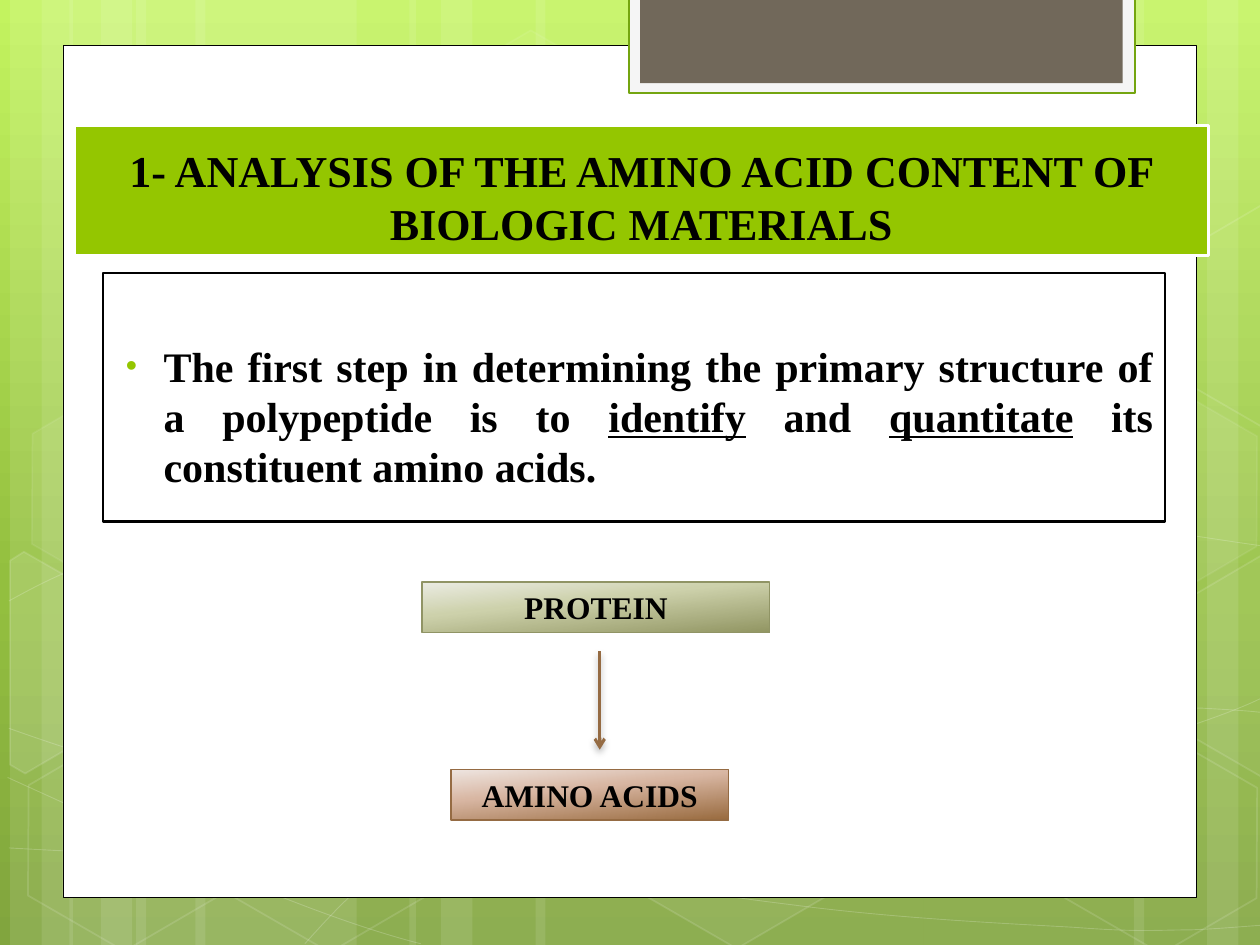
from copy import deepcopy
from lxml.etree import SubElement
from pptx import Presentation
from pptx.dml.color import RGBColor
from pptx.enum.shapes import MSO_CONNECTOR as CONN, MSO_SHAPE as SHAPE
from pptx.enum.text import MSO_ANCHOR as ANCHOR, PP_ALIGN as ALIGN
from pptx.oxml.ns import qn
from pptx.util import Inches, Pt

THEME = dict(
    font="Times New Roman", title=25.2, body=24, label=18,
    text="000000", white="FFFFFF", accent="94C600", tab="71685A",
    tab_edge="F5F5F5", tab_line="74A510", brown="956B43", olive="909465",
    backdrop=[(0, "C3F35F"), (62, "93BF3F"), (100, "81A53E")],
    olive_fade=[(0, "EBECE3"), (40, "CDD1AB"), (100, "929663")],
    brown_fade=[(0, "EEE5E0"), (40, "D8B6A2"), (100, "996B3F")],
)

TITLE = [("1- ANALYSIS OF THE AMINO ACID CONTENT OF BIOLOGIC MATERIALS", False)]
BODY = [
    ("The first step in determining the primary structure of a polypeptide is to ", False),
    ("identify", True), (" and ", False), ("quantitate", True),
    (" its constituent amino acids.", False),
]
LABELS = [
    ("PROTEIN", (3.35, 4.62, 2.76, 0.4), "olive_fade", "olive"),
    ("AMINO ACIDS", (3.58, 6.11, 2.2, 0.4), "brown_fade", "brown"),
]
STRIPES = [
    (1.08, 1.75), (0.08, 0.5), (0.33, 0.83), (1.55, 1.75), (0.55, 0.5), (0.8, 0.83),
    (7.33, 1.75), (9.58, 0.5), (9, 0.83), (4.25, 3.08), (3.25, 0.5), (3.5, 0.83),
]
CURVES = [
    [(0.07, 6.73), (0.61, 6.76), (1.15, 6.79), (1.9, 6.78), (2.65, 6.77), (3.58, 6.75),
     (4.58, 6.65), (5.58, 6.55), (7, 6.36), (7.92, 6.17), (8.83, 5.98), (9.77, 5.68),
     (10.07, 5.51)],
    [(0.07, 4.77), (0.36, 4.61), (0.65, 4.46), (1.21, 4.31), (1.78, 4.16), (2.59, 3.94),
     (3.47, 3.87), (4.36, 3.8), (5.44, 3.79), (6.54, 3.87), (7.64, 3.95), (9.47, 4.26),
     (10.07, 4.34)],
    [(0.06, 6.17), (1.27, 6.72), (2.47, 7.27), (3.34, 7.49)],
    [(0.07, 5.78), (0.38, 5.89), (0.7, 6), (1.28, 6.16), (1.86, 6.31), (2.73, 6.56),
     (3.57, 6.73), (4.4, 6.9), (5.45, 7.08), (6.28, 7.18), (7.11, 7.29), (8, 7.33),
     (8.53, 7.36), (9.05, 7.4), (9.19, 7.38), (9.45, 7.38), (9.71, 7.37), (9.89, 7.35),
     (10.07, 7.34)],
    [(2.42, 7.49), (2.6, 7.29), (2.78, 7.09), (3.02, 6.91), (3.26, 6.73), (3.6, 6.53),
     (3.88, 6.39), (4.16, 6.25), (4.33, 6.19), (4.7, 6.09), (5.06, 5.99), (5.73, 5.85),
     (6.08, 5.78), (6.44, 5.71), (6.49, 5.71), (6.8, 5.69), (7.11, 5.66), (7.6, 5.63),
     (7.94, 5.62), (8.29, 5.61), (8.86, 5.62), (8.86, 5.62), (8.86, 5.62), (9.53, 5.62),
     (9.53, 5.62), (9.71, 5.63), (9.88, 5.64), (9.97, 5.65), (10.06, 5.66),
     (10.03, 5.65), (10.06, 5.66)],
]
HEXAGONS = [
    (3.34, 0.36, 4, 8), (4.97, 5.89, 6, 12), (0.11, 5.91, None, 12), (0.14, 3.12, 7, 8),
    (1.74, 5.92, None, 12), (8.34, 5.93, None, 12), (8.34, 3.14, 7, 8),
]
CUT_HEXAGONS = [
    ([(0.08, 4.45), (0.19, 4.38), (0.96, 4.82), (0.95, 5.7), (0.2, 6.14), (0.08, 6.07)], 10),
    ([(9.26, 4.85), (10.01, 4.41), (10.09, 4.46), (10.09, 6.13), (10.02, 6.17),
      (9.26, 5.73)], 4),
    ([(9.26, 2.07), (10.01, 1.63), (10.1, 1.68), (10.09, 3.35), (10.02, 3.39),
      (9.26, 2.95)], None),
]


def paint(fmt, color, alpha=100):
    fmt.solid()
    fmt.fore_color.rgb = RGBColor.from_string(color)
    if alpha < 100:
        clr = fmt._xPr.find(qn("a:solidFill"))[0]
        SubElement(clr, qn("a:alpha"), val=str(alpha * 1000))


def fade(fill, element, stops, angle):
    fill.gradient()
    fill.gradient_angle = 360 - angle
    gs_list = element.find(".//" + qn("a:gsLst"))
    gs_list.insert(1, deepcopy(gs_list[0]))
    for stop, (position, color) in zip(fill.gradient_stops, stops):
        stop.position = position / 100
        stop.color.rgb = RGBColor.from_string(color)


def style(sp, fill=None, alpha=100, line=None, width=1, line_alpha=100):
    sp.shadow.inherit = False
    if fill:
        paint(sp.fill, fill, alpha)
    else:
        sp.fill.background()
    if line:
        sp.line.width = Pt(width)
        paint(sp.line.fill, line, line_alpha)
    else:
        sp.line.fill.background()
    return sp


def add_box(s, box, shape=SHAPE.RECTANGLE, **look):
    return style(s.shapes.add_shape(shape, *map(Inches, box)), **look)


def add_outline(s, points, close, **look):
    points = [(Inches(x), Inches(y)) for x, y in points]
    builder = s.shapes.build_freeform(*points[0], scale=1.0)
    builder.add_line_segments(points[1:], close=close)
    return style(builder.convert_to_shape(), **look)


def add_curve(s, points, **look):
    sp = add_outline(s, points, False, **look)
    outline = sp._element.find(".//" + qn("a:path".replace("path", "pathLst")))[0]
    steps = outline.findall(qn("a:lnTo"))
    for i in range(0, len(steps), 3):
        bend = SubElement(outline, qn("a:cubicBezTo"))
        for step in steps[i:i + 3]:
            bend.append(step[0])
            outline.remove(step)


def add_text(sp, runs, size, align=ALIGN.CENTER, anchor=ANCHOR.MIDDLE, top=0.05, bullet=None):
    tf = sp.text_frame
    tf.word_wrap, tf.vertical_anchor, tf.margin_top = True, anchor, Inches(top)
    p = tf.paragraphs[0]
    p.alignment = align
    if bullet:
        pPr = p._p.get_or_add_pPr()
        pPr.set("marL", str(Inches(0.38)))
        pPr.set("indent", str(Inches(-0.3)))
        SubElement(SubElement(pPr, qn("a:buClr")), qn("a:srgbClr"), val=THEME["accent"])
        SubElement(pPr, qn("a:buSzPct"), val="76000")
        SubElement(pPr, qn("a:buFont"), typeface="Arial")
        SubElement(pPr, qn("a:buChar"), char=bullet)
    for text, underline in runs:
        r = p.add_run()
        r.text = text
        r.font.name, r.font.size = THEME["font"], Pt(size)
        r.font.bold, r.font.underline = True, underline
        r.font.color.rgb = RGBColor.from_string(THEME["text"])


def add_arrow(s, start, end):
    cx = s.shapes.add_connector(CONN.STRAIGHT, *map(Inches, start + end))
    cx.line.width = Pt(1.75)
    paint(cx.line.fill, THEME["brown"])
    SubElement(cx.line._get_or_add_ln(), qn("a:tailEnd"), type="arrow")
    effects = SubElement(cx._element.spPr, qn("a:effectLst"))
    shadow = SubElement(effects, qn("a:outerShdw"), blurRad=str(Pt(4)), dist=str(Pt(2)),
                        dir="5400000", rotWithShape="0")
    clr = SubElement(shadow, qn("a:srgbClr"), val=THEME["text"])
    SubElement(clr, qn("a:alpha"), val="28000")


def add_backdrop(s):
    white = THEME["white"]
    fade(s.background.fill, s._element, THEME["backdrop"], 90)
    for left, width in STRIPES:
        add_box(s, (left, 0, width, 7.5), fill=white, alpha=10)
    for points in CURVES:
        add_curve(s, points, line=white, width=0.5, line_alpha=20)
    for left, top, alpha, line_alpha in HEXAGONS:
        sp = add_box(s, (left, top, 1.75, 1.52), SHAPE.HEXAGON, fill=alpha and white,
                     alpha=alpha or 100, line=white, line_alpha=line_alpha)
        sp.adjustments[0], sp.adjustments[1] = 0.285, 1.155
        sp.rotation = 30
    for points, alpha in CUT_HEXAGONS:
        add_outline(s, points, True, fill=alpha and white, alpha=alpha or 100,
                    line=white, line_alpha=12)
    add_box(s, (0.5, 0.36, 9, 6.76), fill=white, line=THEME["text"], width=0.5)
    add_box(s, (4.99, -0.02, 4.02, 0.76), fill=THEME["tab_edge"],
            line=THEME["tab_line"], width=1.25)
    add_box(s, (5.08, -0.02, 3.83, 0.68), fill=THEME["tab"])


def main():
    """Build the slide on analysing the amino acid content of biologic materials."""
    prs = Presentation()
    prs.slide_width, prs.slide_height = Inches(10), Inches(7.5)
    s = prs.slides.add_slide(prs.slide_layouts[6])
    add_backdrop(s)
    title = add_box(s, (0.59, 1, 9, 1.03), fill=THEME["accent"],
                    line=THEME["white"], width=1.75)
    add_text(title, TITLE, THEME["title"], anchor=ANCHOR.BOTTOM)
    body = add_box(s, (0.82, 2.17, 8.43, 1.97), fill=THEME["white"],
                   line=THEME["text"], width=1.25)
    add_text(body, BODY, THEME["body"], align=ALIGN.JUSTIFY, anchor=ANCHOR.TOP,
             top=0.53, bullet="•")
    for text, box, stops, line in LABELS:
        sp = add_box(s, box, line=THEME[line], width=0.75)
        fade(sp.fill, sp._element, THEME[stops], 84)
        add_text(sp, [(text, False)], THEME["label"])
    add_arrow(s, (4.76, 5.17), (4.76, 5.95))
    prs.save("out.pptx")


if __name__ == "__main__":
    main()
